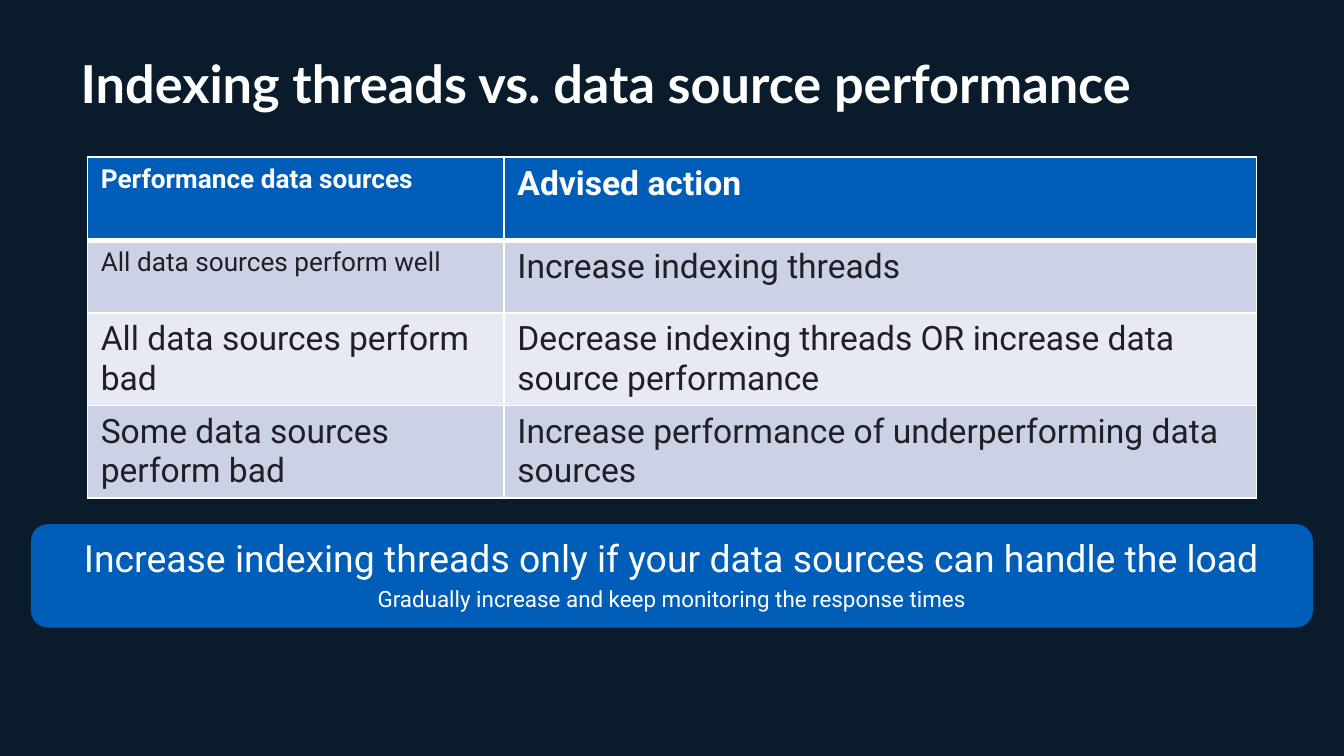
from dataclasses import dataclass

from lxml.etree import SubElement
from pptx import Presentation
from pptx.dml.color import RGBColor
from pptx.enum.shapes import MSO_SHAPE
from pptx.enum.text import MSO_ANCHOR, MSO_AUTO_SIZE, PP_ALIGN
from pptx.oxml.ns import qn
from pptx.util import Inches, Pt


@dataclass(frozen=True)
class Theme:
    back: str = "0A1C2C"
    blue: str = "005EB8"
    white: str = "FFFFFF"
    ink: str = "211F26"
    bands: tuple[str, str] = ("CCD2E6", "E7EAF3")
    head: str = "Lato"
    body: str = "Roboto"
    title: int = 28
    lead: int = 20
    cell: int = 18
    small: int = 14
    note: int = 12


@dataclass(frozen=True)
class Row:
    source: str
    action: str
    height: float
    size: int = Theme.cell  # size of the source column


THEME = Theme()
WIDTH = 10
HEIGHT = WIDTH * 9 / 16
COLS = (3.1, 5.6)
ROWS = (
    Row("Performance data sources", "Advised action", 0.62, THEME.small),
    Row("All data sources perform well", "Increase indexing threads", 0.54, THEME.small),
    Row("All data sources perform bad",
        "Decrease indexing threads OR increase data source performance", 0.55),
    Row("Some data sources perform bad",
        "Increase performance of underperforming data sources", 0.55),
)


def paint(fill, color: str) -> None:
    fill.solid()
    fill.fore_color.rgb = RGBColor.from_string(color)


def write(para, text: str, *, size: int, color: str = THEME.white,
          font: str = THEME.body, bold: bool = False,
          align=PP_ALIGN.LEFT) -> None:
    para.alignment = align
    run = para.add_run()
    run.text = text
    run.font.name, run.font.size, run.font.bold = font, Pt(size), bold
    run.font.color.rgb = RGBColor.from_string(color)


def inset(frame, gap: float) -> None:
    frame.margin_left = frame.margin_right = Inches(gap)
    frame.margin_top = frame.margin_bottom = Inches(gap)
    frame.vertical_anchor = MSO_ANCHOR.MIDDLE
    frame.word_wrap = True


def edge(cell, top: int, bottom: int) -> None:
    """Draw white cell borders; call before filling, as the schema orders them."""
    props = cell._tc.get_or_add_tcPr()
    for side, width in (("L", 1), ("R", 1), ("T", top), ("B", bottom)):
        line = SubElement(props, qn(f"a:ln{side}"), w=str(Pt(width)))
        fill = SubElement(line, qn("a:solidFill"))
        SubElement(fill, qn("a:srgbClr"), val=THEME.white)


def add_title(slide, text: str) -> None:
    title = slide.shapes.title
    title.left, title.top = Inches(0.6), Inches(0.34)
    title.width, title.height = Inches(8.4), Inches(0.55)
    frame = title.text_frame
    inset(frame, 0)
    frame.auto_size = MSO_AUTO_SIZE.NONE
    write(frame.paragraphs[0], text, size=THEME.title, font=THEME.head, bold=True)


def add_grid(slide, rows: tuple[Row, ...]) -> None:
    table = slide.shapes.add_table(
        len(rows), len(COLS), Inches(0.65), Inches(1.17),
        Inches(sum(COLS)), Inches(sum(row.height for row in rows))).table
    table.horz_banding = False
    for col, width in zip(table.columns, COLS):
        col.width = Inches(width)
    for i, row in enumerate(rows):
        table.rows[i].height = Inches(row.height)
        top = i == 0
        for j, (text, size) in enumerate(
                ((row.source, row.size), (row.action, THEME.cell))):
            cell = table.cell(i, j)
            edge(cell, 3 if i == 1 else 1, 3 if top else 1)
            paint(cell.fill, THEME.blue if top else THEME.bands[(i - 1) % 2])
            write(cell.text_frame.paragraphs[0], text, size=size, bold=top,
                  color=THEME.white if top else THEME.ink)


def add_banner(slide, lead: str, note: str) -> None:
    shape = slide.shapes.add_shape(MSO_SHAPE.ROUNDED_RECTANGLE, Inches(0.23),
                                   Inches(3.9), Inches(9.54), Inches(0.77))
    shape.shadow.inherit = False
    paint(shape.fill, THEME.blue)
    shape.line.fill.background()
    frame = shape.text_frame
    inset(frame, 0.16)
    first, last = frame.paragraphs[0], frame.add_paragraph()
    for para, text, size in ((first, lead, THEME.lead), (last, note, THEME.note)):
        para.line_spacing = 0.9
        para.space_after = Pt(2)
        write(para, text, size=size, align=PP_ALIGN.CENTER)
    last.space_before = Pt(2)


def main() -> None:
    deck = Presentation()
    deck.slide_width, deck.slide_height = Inches(WIDTH), Inches(HEIGHT)
    slide = deck.slides.add_slide(deck.slide_layouts[5])
    paint(slide.background.fill, THEME.back)
    add_title(slide, "Indexing threads vs. data source performance")
    add_grid(slide, ROWS)
    add_banner(slide,
               "Increase indexing threads only if your data sources can handle the load",
               "Gradually increase and keep monitoring the response times")
    deck.save("out.pptx")


if __name__ == "__main__":
    main()
